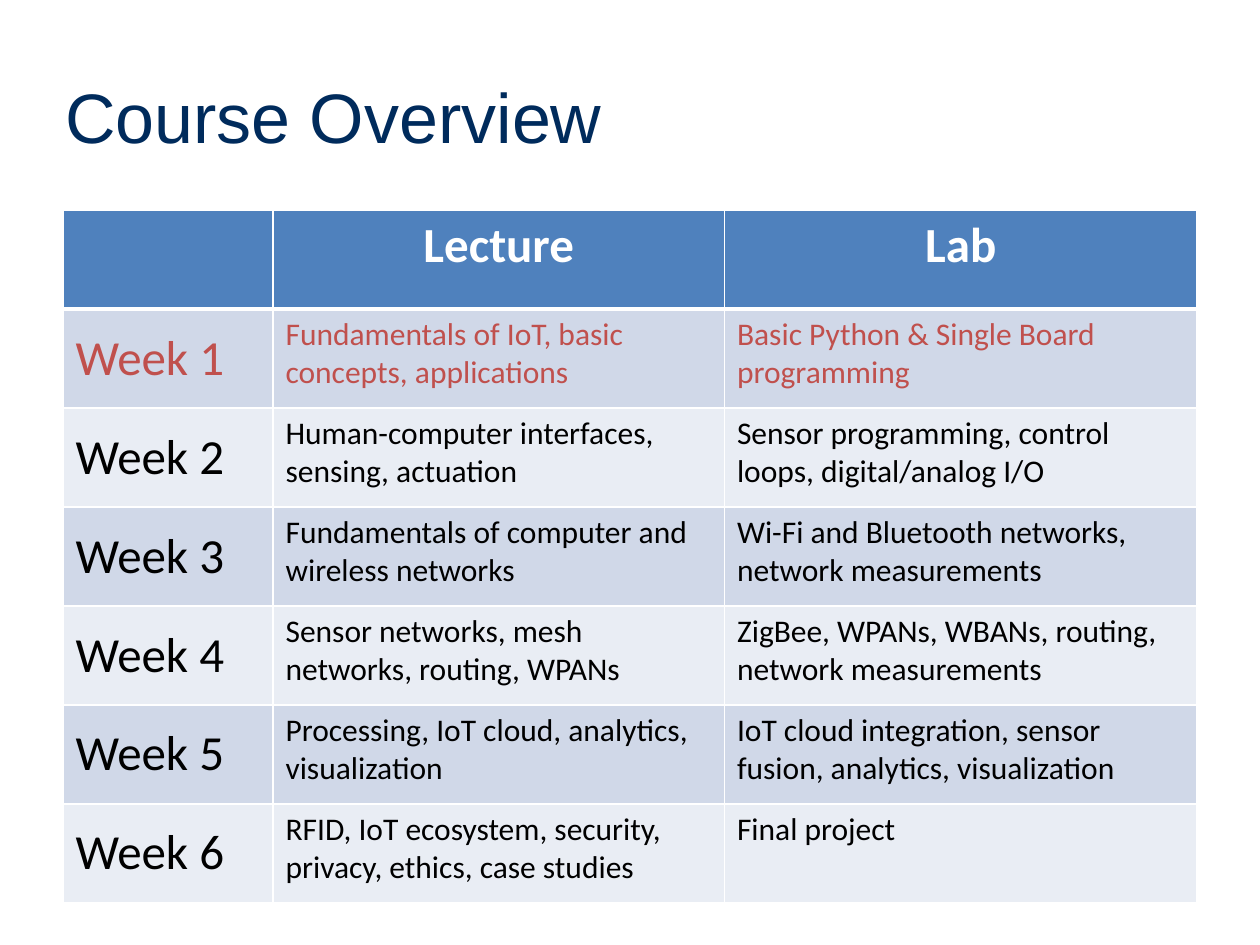
from dataclasses import dataclass

from lxml.etree import SubElement
from pptx import Presentation
from pptx.dml.color import RGBColor
from pptx.enum.text import MSO_ANCHOR, PP_ALIGN
from pptx.oxml.ns import qn
from pptx.util import Pt


@dataclass(frozen=True)
class Theme:
    """Colours, fonts and type sizes of the slide."""

    title_colour: str = "002B5C"
    header_fill: str = "4F81BD"
    band_fills: tuple = ("D0D8E8", "E9EDF4")
    white: str = "FFFFFF"
    text_colour: str = "000000"
    current_colour: str = "C0504D"
    title_font: str = "Arial"
    body_font: str = "Calibri"
    title_size: int = 40
    label_size: int = 28
    body_size: int = 18
    thin_border: int = 1
    thick_border: int = 3


class SlideBuilder:
    """Holds the theme and the current slide."""

    def __init__(self, slide, theme):
        """Keep the slide and its theme."""
        self.slide = slide
        self.theme = theme

    def style(self, text_frame, font_name, size, colour, alignment, bold=False):
        """Format every run of a text frame."""
        for paragraph in text_frame.paragraphs:
            paragraph.alignment = alignment
            for run in paragraph.runs:
                run.font.name = font_name
                run.font.size = Pt(size)
                run.font.bold = bold
                run.font.color.rgb = RGBColor.from_string(colour)

    def title(self, text, left, top, width, height):
        """Place and format the title placeholder."""
        shape = self.slide.shapes.title
        shape.left, shape.top = Pt(left), Pt(top)
        shape.width, shape.height = Pt(width), Pt(height)
        text_frame = shape.text_frame
        text_frame.text = text
        text_frame.vertical_anchor = MSO_ANCHOR.MIDDLE
        self.style(text_frame, self.theme.title_font, self.theme.title_size,
                   self.theme.title_colour, PP_ALIGN.LEFT)

    def borders(self, cell, top, bottom):
        """Draw white borders around a cell."""
        thin = self.theme.thin_border
        properties = cell._tc.get_or_add_tcPr()
        for side, width in (("L", thin), ("R", thin), ("T", top), ("B", bottom)):
            line = SubElement(properties, qn(f"a:ln{side}"), w=str(Pt(width)))
            fill = SubElement(line, qn("a:solidFill"))
            SubElement(fill, qn("a:srgbClr"), val=self.theme.white)

    def cell(self, cell, text, row, column, current_row):
        """Fill and format one cell according to its row and column."""
        theme = self.theme
        is_header, is_label = row == 0, column == 0
        self.borders(cell,
                     theme.thick_border if row == 1 else theme.thin_border,
                     theme.thick_border if is_header else theme.thin_border)
        fill = theme.header_fill if is_header else theme.band_fills[(row - 1) % 2]
        cell.fill.solid()
        cell.fill.fore_color.rgb = RGBColor.from_string(fill)
        cell.text_frame.text = text
        if is_label and not is_header:
            cell.vertical_anchor = MSO_ANCHOR.MIDDLE
        if is_header:
            colour = theme.white
        else:
            colour = theme.current_colour if row == current_row else theme.text_colour
        self.style(cell.text_frame, theme.body_font,
                   theme.label_size if is_header or is_label else theme.body_size,
                   colour, PP_ALIGN.CENTER if is_header else PP_ALIGN.LEFT, is_header)

    def table(self, rows, left, top, column_widths, height, current_row):
        """Add a table with equal rows and one highlighted row."""
        frame = self.slide.shapes.add_table(
            len(rows), len(column_widths), Pt(left), Pt(top),
            Pt(sum(column_widths)), Pt(height))
        table = frame.table
        for column, width in zip(table.columns, column_widths):
            column.width = Pt(width)
        for row_index, texts in enumerate(rows):
            table.rows[row_index].height = Pt(height / len(rows))
            for column_index, text in enumerate(texts):
                self.cell(table.cell(row_index, column_index), text,
                          row_index, column_index, current_row)


WEEKS = [
    ("Fundamentals of IoT, basic concepts, applications",
     "Basic Python & Single Board programming"),
    ("Human-computer interfaces, sensing, actuation",
     "Sensor programming, control loops, digital/analog I/O"),
    ("Fundamentals of computer and wireless networks",
     "Wi-Fi and Bluetooth networks, network measurements"),
    ("Sensor networks, mesh networks, routing, WPANs",
     "ZigBee, WPANs, WBANs, routing, network measurements"),
    ("Processing, IoT cloud, analytics, visualization",
     "IoT cloud integration, sensor fusion, analytics, visualization"),
    ("RFID, IoT ecosystem, security, privacy, ethics, case studies",
     "Final project"),
]


def main():
    """Build the course overview slide."""
    presentation = Presentation()
    presentation.slide_width, presentation.slide_height = Pt(720), Pt(540)
    slide = presentation.slides.add_slide(presentation.slide_layouts[5])
    builder = SlideBuilder(slide, Theme())
    builder.title("Course Overview", 30, 30, 654, 72)
    rows = [("", "Lecture", "Lab")]
    rows += [(f"Week {number}", *topics) for number, topics in enumerate(WEEKS, 1)]
    builder.table(rows, 36, 120, (120, 258, 270), 396, current_row=1)
    presentation.save("out.pptx")


if __name__ == "__main__":
    main()
